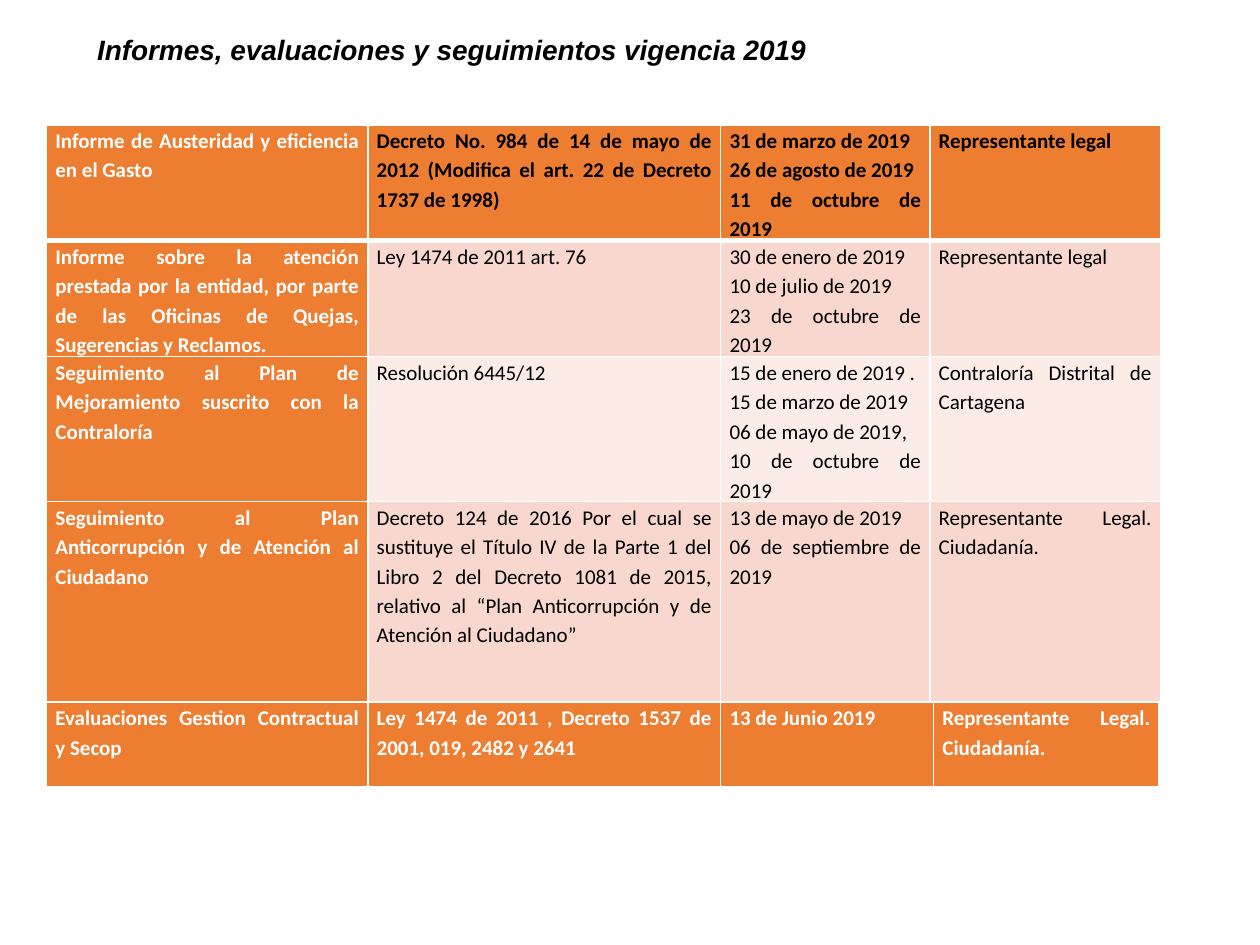
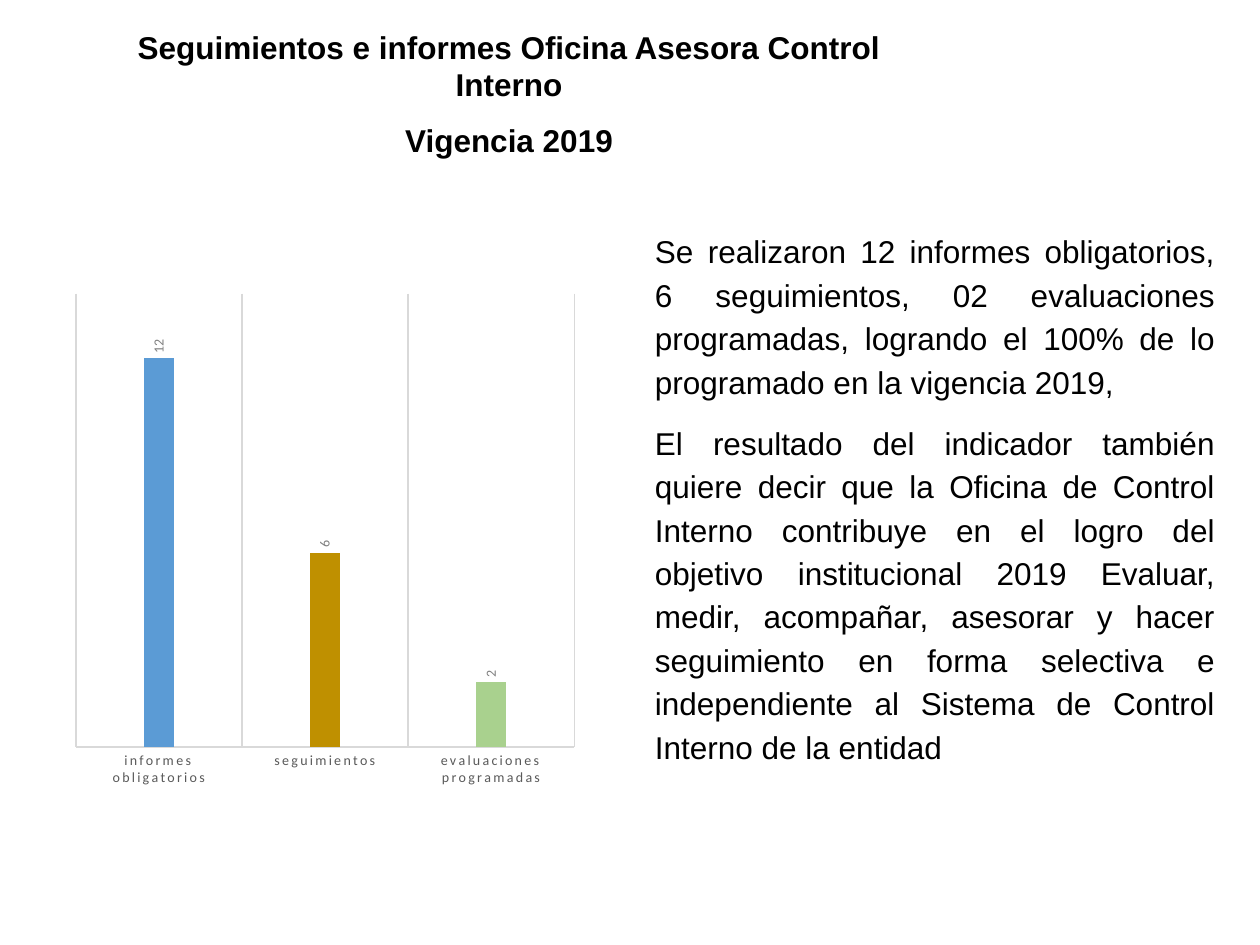
from lxml import etree
from pptx import Presentation
from pptx.chart.data import CategoryChartData
from pptx.dml.color import RGBColor
from pptx.enum import chart as charts, text
from pptx.oxml.ns import qn
from pptx.util import Inches, Pt

WHITE = RGBColor(0xFF, 0xFF, 0xFF)
BLACK = RGBColor(0, 0, 0)
ORANGE = RGBColor(0xED, 0x7D, 0x31)
ROSE = RGBColor(0xF8, 0xD7, 0xCE)
PALE_ROSE = RGBColor(0xFC, 0xEC, 0xE8)
RULE_GRAY = RGBColor(0xD9, 0xD9, 0xD9)
AXIS_GRAY = RGBColor(0x59, 0x59, 0x59)
LABEL_GRAY = RGBColor(0x80, 0x80, 0x80)
BAR_COLORS = [
    RGBColor(0x5B, 0x9B, 0xD5),
    RGBColor(0xBF, 0x90, 0x00),
    RGBColor(0xA9, 0xD1, 0x8E),
]

CENTER = text.PP_ALIGN.CENTER
JUSTIFY = text.PP_ALIGN.JUSTIFY

REPORTS = [
    ["Informe de Austeridad y eficiencia en el Gasto",
     "Decreto No. 984 de 14 de mayo de 2012 (Modifica el art. 22 de Decreto 1737 de 1998)",
     "31 de marzo de 2019\n26 de agosto de 2019\n11 de octubre de 2019",
     "Representante legal"],
    ["Informe sobre la atención prestada por la entidad, por parte de las Oficinas de "
     "Quejas, Sugerencias y Reclamos.",
     "Ley 1474 de 2011 art. 76",
     "30 de enero de 2019\n10 de julio de 2019\n23 de octubre de 2019",
     "Representante legal"],
    ["Seguimiento al Plan de Mejoramiento suscrito con la Contraloría",
     "Resolución 6445/12",
     "15 de enero de 2019 .\n15 de marzo de 2019\n06 de mayo de 2019,\n10 de octubre de 2019",
     "Contraloría Distrital de Cartagena"],
    ["Seguimiento al Plan Anticorrupción y de Atención al Ciudadano",
     "Decreto 124 de 2016 Por el cual se sustituye el Título IV de la Parte 1 del Libro 2 "
     "del Decreto 1081 de 2015, relativo al “Plan Anticorrupción y de Atención al Ciudadano”",
     "13 de mayo de 2019\n06 de septiembre de 2019",
     "Representante Legal. Ciudadanía."],
]
EVALUATIONS = [
    ["Evaluaciones Gestion Contractual y Secop",
     "Ley 1474 de 2011 , Decreto 1537 de 2001, 019, 2482 y 2641",
     "13 de Junio 2019",
     "Representante Legal. Ciudadanía."],
]


def report_style(row, column):
    if column == 0:
        return ORANGE, WHITE, True
    if row == 0:
        return ORANGE, BLACK, True
    return (ROSE if row % 2 else PALE_ROSE), BLACK, False


def evaluation_style(row, column):
    return ORANGE, WHITE, True


class Deck:
    def __init__(self):
        self.deck = Presentation()
        self.deck.slide_width = Inches(10)
        self.deck.slide_height = Inches(7.5)
        self.page = None

    def new_page(self):
        self.page = self.deck.slides.add_slide(self.deck.slide_layouts[6])

    def set_font(self, font, size, color, name="Arial", bold=False, italic=False):
        font.name, font.size = name, Pt(size)
        font.bold, font.italic = bold, italic
        font.color.rgb = color

    def fill_text(self, frame, lines, align, spacing=1, after=0, **font):
        for number, line in enumerate(lines):
            para = frame.paragraphs[0] if number == 0 else frame.add_paragraph()
            para.text = line
            para.alignment = align
            para.line_spacing = spacing
            para.space_after = Pt(after)
            self.set_font(para.font, **font)

    def text_box(self, left, top, width, height, lines, align,
                 anchor=text.MSO_ANCHOR.TOP, **style):
        box = self.page.shapes.add_textbox(
            Inches(left), Inches(top), Inches(width), Inches(height))
        box.text_frame.word_wrap = True
        box.text_frame.vertical_anchor = anchor
        self.fill_text(box.text_frame, lines, align, color=BLACK, **style)

    def cell_borders(self, cell, bottom):
        properties = cell._tc.get_or_add_tcPr()
        for side, points in (("L", 1), ("R", 1), ("T", 1), ("B", bottom)):
            line = etree.SubElement(properties, qn(f"a:ln{side}"), w=str(Pt(points)))
            fill = etree.SubElement(line, qn("a:solidFill"))
            etree.SubElement(fill, qn("a:srgbClr"), val=str(WHITE))

    def table(self, left, top, widths, heights, rows, cell_style):
        table = self.page.shapes.add_table(
            len(rows), len(widths), Inches(left), Inches(top),
            Inches(sum(widths)), Inches(sum(heights))).table
        table.first_row = table.horz_banding = False
        for column, width in zip(table.columns, widths):
            column.width = Inches(width)
        for row, height in zip(table.rows, heights):
            row.height = Inches(height)
        for r, row in enumerate(rows):
            for c, content in enumerate(row):
                cell = table.cell(r, c)
                fill, color, bold = cell_style(r, c)
                cell.margin_left = cell.margin_right = Inches(0.07)
                cell.margin_top = cell.margin_bottom = 0
                self.cell_borders(cell, bottom=3 if r == 0 else 1)
                cell.fill.solid()
                cell.fill.fore_color.rgb = fill
                self.fill_text(cell.text_frame, content.split("\n"), JUSTIFY, spacing=1.15,
                               size=12, color=color, name="Calibri", bold=bold)

    def rule(self, line):
        line.color.rgb = RULE_GRAY
        line.width = Pt(0.75)

    def column_chart(self, left, top, width, height, categories, values):
        data = CategoryChartData()
        data.categories = categories
        data.add_series("Series 1", values)
        chart = self.page.shapes.add_chart(
            charts.XL_CHART_TYPE.COLUMN_CLUSTERED, Inches(left), Inches(top),
            Inches(width), Inches(height), data).chart
        chart.has_legend = chart.has_title = False
        self.set_font(chart.font, 10, BLACK, "Calibri")

        value_axis = chart.value_axis
        value_axis.minimum_scale, value_axis.maximum_scale = 0, 14
        value_axis.has_major_gridlines = False
        value_axis.visible = False

        axis = chart.category_axis
        axis.major_tick_mark = charts.XL_TICK_MARK.NONE
        axis.has_major_gridlines = True
        self.rule(axis.major_gridlines.format.line)
        self.rule(axis.format.line)
        self.set_font(axis.tick_labels.font, 8, AXIS_GRAY, "Calibri")
        axis._element.xpath("c:txPr//a:defRPr")[0].set("spc", "120")

        plot = chart.plots[0]
        plot.gap_width, plot.overlap = 444, -90
        plot.vary_by_categories = False
        series = plot.series[0]
        for number, color in enumerate(BAR_COLORS):
            fill = series.points[number].format.fill
            fill.solid()
            fill.fore_color.rgb = color

        labels = series.data_labels
        labels.show_value = True
        labels.position = charts.XL_LABEL_POSITION.OUTSIDE_END
        self.set_font(labels.font, 8, LABEL_GRAY, "Calibri")
        body = labels._element.xpath("c:txPr/a:bodyPr")[0]
        body.set("rot", "-5400000")
        body.set("vert", "horz")


def main():
    show = Deck()

    show.new_page()
    show.text_box(0.19, 0.14, 6.79, 0.53,
                  ["Informes, evaluaciones y seguimientos vigencia 2019"], CENTER,
                  anchor=text.MSO_ANCHOR.MIDDLE, spacing=0.9, size=16,
                  bold=True, italic=True)
    show.table(0.37, 0.99, [2.55, 2.8, 1.66, 1.83], [0.81, 0.78, 0.98, 1.63],
               REPORTS, report_style)
    show.table(0.37, 5.57, [2.55, 2.8, 1.69, 1.79], [0.69],
               EVALUATIONS, evaluation_style)

    show.new_page()
    show.text_box(0.69, 0.17, 6.7, 1.15,
                  ["Seguimientos e informes Oficina Asesora Control Interno",
                   "Vigencia 2019"], CENTER, after=10, size=18, bold=True)
    show.text_box(5.1, 1.75, 4.64, 4.4,
                  ["Se realizaron 12 informes obligatorios, 6 seguimientos, 02 evaluaciones "
                   "programadas, logrando el 100% de lo programado en la vigencia 2019,",
                   "El resultado del indicador también quiere decir que la Oficina de Control "
                   "Interno contribuye en el logro del objetivo institucional 2019 Evaluar, "
                   "medir, acompañar, asesorar y hacer seguimiento en forma selectiva e "
                   "independiente al Sistema de Control Interno de la entidad"],
                  JUSTIFY, spacing=1.15, after=10, size=18)
    show.column_chart(0.52, 2.25, 4.12, 4.07,
                      ["informes obligatorios", "seguimientos", "evaluaciones programadas"],
                      [12, 6, 2])

    show.deck.save("out.pptx")


if __name__ == "__main__":
    main()
